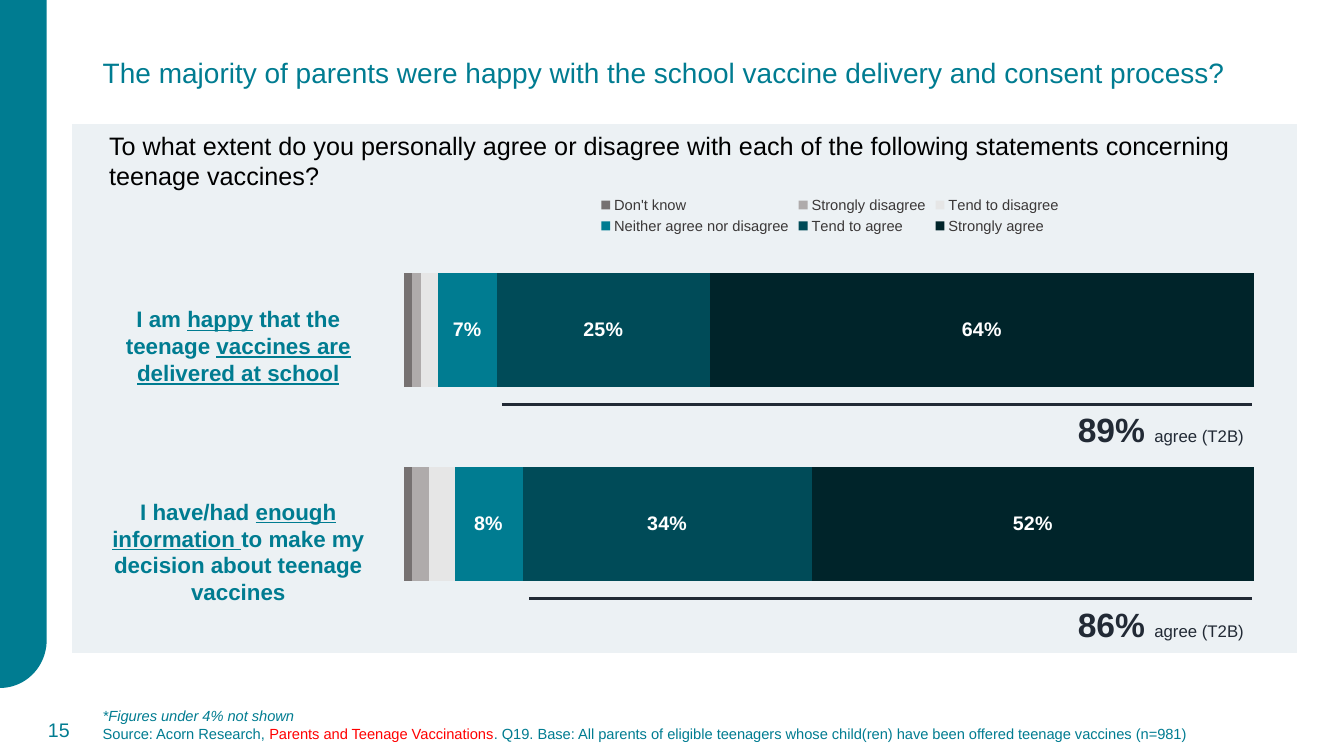
"""Builds the slide on how parents rate school vaccine delivery and consent."""
from math import cos, pi, sin

from lxml.etree import SubElement as Sub
from pptx import Presentation as Deck
from pptx.chart.data import CategoryChartData as Data
from pptx.dml.color import RGBColor as Rgb
from pptx.enum.chart import XL_CHART_TYPE as Kind
from pptx.enum.chart import XL_LABEL_POSITION as Spot
from pptx.enum.chart import XL_LEGEND_POSITION as Side
from pptx.enum.shapes import MSO_CONNECTOR as Link
from pptx.enum.shapes import MSO_SHAPE as Form
from pptx.enum.text import MSO_ANCHOR as Anchor
from pptx.enum.text import PP_ALIGN as Align
from pptx.oxml import parse_xml
from pptx.oxml.ns import nsdecls, qn
from pptx.util import Cm, Pt

HUES = {
    "teal": "007C91", "deep": "004B58", "night": "00242A",
    "dark": "767171", "mid": "AFABAB", "pale": "E6E6E6",
    "panel": "ECF1F4", "white": "FFFFFF", "black": "000000",
    "red": "FF0000", "ink": "222A35", "key": "3B3838",
}


def hue(name):
    return Rgb.from_string(HUES[name])


class Page:
    """Holds the style and the current slide."""

    face = "Arial"

    def __init__(self, slide):
        self.items = slide.shapes

    def font(self, font, size, color, bold=False, italic=False, under=False):
        font.name, font.size = self.face, Pt(size)
        font.color.rgb = hue(color)
        font.bold, font.italic, font.underline = bold, italic, under

    def paint(self, shape, fill, edge, width):
        shape.shadow.inherit = False
        shape.fill.solid()
        shape.fill.fore_color.rgb = hue(fill)
        shape.line.color.rgb = hue(edge)
        shape.line.width = Pt(width)

    def text(self, box, paras, size, color, align=Align.LEFT,
             anchor=Anchor.TOP, space=None, **base):
        frame = self.items.add_textbox(*map(Cm, box)).text_frame
        frame.word_wrap = True
        frame.vertical_anchor = anchor
        for n, parts in enumerate(paras):
            para = frame.add_paragraph() if n else frame.paragraphs[0]
            para.alignment = align
            if space:
                para.line_spacing = space
            for words, style in parts:
                run = para.add_run()
                run.text = words
                self.font(run.font, **{"size": size, "color": color, **base, **style})

    def panel(self, box):
        shape = self.items.add_shape(Form.RECTANGLE, *map(Cm, box))
        self.paint(shape, "panel", "white", 1.5)

    def band(self, width, height, drop):
        arc = [(width * cos(t * pi / 48), height + drop * sin(t * pi / 48))
               for t in range(25)]
        build = self.items.build_freeform(0, 0)
        build.add_line_segments([(Cm(x), Cm(y)) for x, y in [(width, 0)] + arc])
        self.paint(build.convert_to_shape(), "teal", "teal", 1)

    def rule(self, left, right, top):
        line = self.items.add_connector(
            Link.STRAIGHT, Cm(left), Cm(top), Cm(right), Cm(top))
        line.line.color.rgb = hue("ink")
        line.line.width = Pt(2.25)
        Sub(line._element.spPr, qn("a:effectLst"))

    def chart(self, box, cats, rows, area):
        data = Data(number_format="0%")
        data.categories = cats
        for name, _, vals, _ in rows:
            data.add_series(name, vals)
        chart = self.items.add_chart(
            Kind.BAR_STACKED_100, *map(Cm, box), data).chart
        self.font(chart.font, 10, "black")
        chart.has_title = False
        chart.has_legend = True
        chart.legend.position = Side.TOP
        chart.legend.include_in_layout = False
        self.font(chart.legend.font, 10.5, "key")
        chart.category_axis.reverse_order = True
        for axis in (chart.category_axis, chart.value_axis):
            axis.visible = False
            axis.has_major_gridlines = False
        plot = chart.plots[0]
        plot.gap_width, plot.overlap = 70, 100
        plot.vary_by_categories = False
        for series, (_, color, _, shown) in zip(plot.series, rows):
            series.format.fill.solid()
            series.format.fill.fore_color.rgb = hue(color)
            if shown:
                tags = series.data_labels
                tags.show_value = True
                tags.position = Spot.CENTER
                tags.number_format = "0%"
                tags.number_format_is_linked = False
                self.font(tags.font, 14, "white", bold=True)
        self.place(chart, area)

    def place(self, chart, area):
        root = chart._chartSpace.chart.plotArea
        for old in root.findall(qn("c:layout")):
            root.remove(old)
        layout = parse_xml(f"<c:layout {nsdecls('c')}/>")
        root.insert(0, layout)
        manual = Sub(layout, qn("c:manualLayout"))
        pairs = [("layoutTarget", "inner"), ("xMode", "edge"), ("yMode", "edge")]
        for tag, val in pairs + list(zip("xywh", area)):
            Sub(manual, qn(f"c:{tag}"), val=str(val))


def main():
    deck = Deck()
    deck.slide_width, deck.slide_height = Cm(33.87), Cm(19.05)
    page = Page(deck.slides.add_slide(deck.slide_layouts[6]))

    page.band(1.16, 16.13, 1.19)
    page.text((2.34, 0.03, 29.21, 3.68), [[(
        "The majority of parents were happy with the school vaccine delivery "
        "and consent process?", {})]], 20, "teal", anchor=Anchor.MIDDLE, space=0.9)
    page.text((2.34, 17.75, 29.46, 1.02), [
        [("*Figures under 4% not shown", {"italic": True})],
        [("Source: Acorn Research, ", {}),
         ("Parents and Teenage Vaccinations", {"color": "red"}),
         (". Q19. Base: All parents of eligible teenagers whose child(ren) "
          "have been offered teenage vaccines (n=981)", {})],
    ], 10.5, "teal", anchor=Anchor.MIDDLE)
    page.text((0.36, 17.88, 1.65, 1.02), [[("15", {})]], 14, "teal",
              Align.RIGHT, Anchor.MIDDLE)
    page.panel((1.8, 3.1, 30.91, 13.39))

    under = {"under": True}
    claims = [
        (7.57, 2.31, [("I am ", {}), ("happy", under), (" that the teenage ", {}),
                      ("vaccines are delivered at school", under)]),
        (12.42, 3, [("I have/had ", {}), ("enough information ", under),
                    ("to make my decision about teenage vaccines", {})]),
    ]
    for top, height, parts in claims:
        page.text((2.5, top, 7.01, height), [parts], 16, "teal",
                  Align.CENTER, bold=True)

    page.chart((9.58, 4.67, 22.68, 11.71), ["1", "2"], [
        ("Don't know", "dark", (0.01, 0.01), False),
        ("Strongly disagree", "mid", (0.01, 0.02), False),
        ("Tend to disagree", "pale", (0.02, 0.03), False),
        ("Neither agree nor disagree", "teal", (0.07, 0.08), True),
        ("Tend to agree", "deep", (0.25, 0.34), True),
        ("Strongly agree", "night", (0.64, 0.52), True),
    ], (0.026, 0.102, 0.945, 0.835))

    for left, top, total in ((12.65, 10.19, "89% "), (13.34, 15.09, "86% ")):
        page.rule(left, 31.55, top)
        page.text((24.08, top, 7.52, 1.27), [[
            (total, {"size": 24, "bold": True}), ("agree (T2B)", {})]],
            12, "ink", Align.RIGHT)

    page.text((2.5, 3.15, 29.77, 1.8), [[(
        "To what extent do you personally agree or disagree with each of the "
        "following statements concerning teenage vaccines?", {})]], 18, "black")
    deck.save("out.pptx")


if __name__ == "__main__":
    main()
